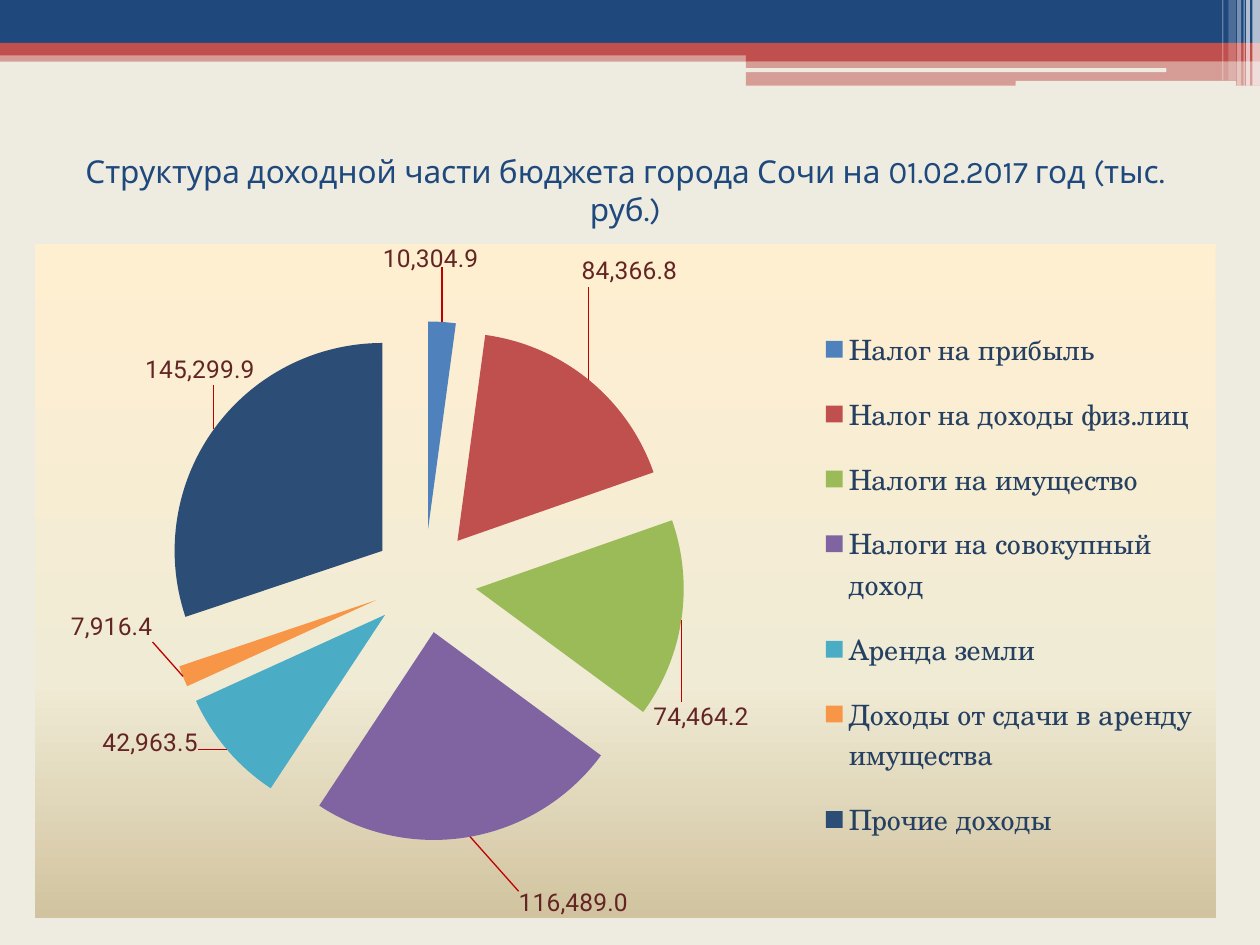
from lxml import etree
from pptx import Presentation
from pptx.chart.data import CategoryChartData
from pptx.dml.color import RGBColor
from pptx.enum.chart import XL_CHART_TYPE as ChartType, XL_LABEL_POSITION as LabelPos
from pptx.enum.chart import XL_LEGEND_POSITION as LegendPos
from pptx.enum.shapes import MSO_SHAPE as Shape
from pptx.enum.text import MSO_ANCHOR, PP_ALIGN
from pptx.oxml import parse_xml
from pptx.oxml.ns import nsdecls, qn
from pptx.util import Pt

NAVY = RGBColor(0x1F, 0x49, 0x7D)
RED = RGBColor(0xC0, 0x50, 0x4D)
CREAM = RGBColor(0xEE, 0xEC, 0xE1)
WHITE = RGBColor(0xFF, 0xFF, 0xFF)
BLACK = RGBColor(0, 0, 0)
LEGEND_BLUE = RGBColor(0x25, 0x40, 0x61)
LABEL_BROWN = RGBColor(0x63, 0x25, 0x23)
LEADER_RED = RGBColor(0xC0, 0, 0)
GRADIENT = [(0, RGBColor(0xFF, 0xEF, 0xD1)), (65, RGBColor(0xF0, 0xEB, 0xD5)),
            (100, RGBColor(0xD1, 0xC3, 0x9F))]
NUMBER_FORMAT = "#,##0.0"

# category, value, slice colour, label shift as a share of the chart size
INCOME = [
    ("Налог на прибыль", 10304.9, RGBColor(0x4F, 0x81, 0xBD), (-0.01, -0.07)),
    ("Налог на доходы физ.лиц", 84366.8, RED, (-0.01, -0.13)),
    ("Налоги на имущество", 74464.2, RGBColor(0x9B, 0xBB, 0x59), (-0.03, 0.12)),
    ("Налоги на совокупный доход", 116489.0, RGBColor(0x80, 0x64, 0xA2), (0.04, 0.07)),
    ("Аренда земли", 42963.5, RGBColor(0x4B, 0xAC, 0xC6), (-0.02, -0.04)),
    ("Доходы от сдачи в аренду имущества", 7916.4, RGBColor(0xF7, 0x96, 0x46), (-0.02, -0.1)),
    ("Прочие доходы", 145299.9, RGBColor(0x2C, 0x4D, 0x75), (0.04, -0.06)),
]


def add_band(s, box, color, alpha=100, kind=Shape.RECTANGLE):
    sp = s.shapes.add_shape(kind, *map(Pt, box))
    sp.shadow.inherit = False
    sp.line.fill.background()
    sp.fill.solid()
    sp.fill.fore_color.rgb = color
    if alpha < 100:
        clr = sp.fill._xPr.find(".//" + qn("a:srgbClr"))
        etree.SubElement(clr, qn("a:alpha")).set("val", str(alpha * 1000))


def add_header(s, x, y, w):
    """Coloured bands with light stripes at the right end."""
    half = x + 426.2
    add_band(s, (x, y + 28.8, w, 6.5), RED, 50)
    add_band(s, (x, y, w, 24.5), NAVY)
    add_band(s, (x, y + 24.5, w, 7.2), RED)
    add_band(s, (half, y + 28, w - 426.2, 6.9), RED)
    add_band(s, (half, y + 34.7, w - 426.2, 14.2), RED, 50)
    for left, top, width, height in [(425.5, 39, 241, 2.2), (580.3, 46.2, 126, 2.8)]:
        add_band(s, (x + left, y + top, width, height), CREAM, kind=Shape.ROUNDED_RECTANGLE)
    stripes = [(4.3, 4.3, 49, 65), (7.9, 2.2, 49, 65), (9.4, 0.7, 49, 60),
               (13, 2.2, 49, 40), (18, 4.3, 46, 20), (21.6, 0.7, 46, 30)]
    for from_right, width, height, alpha in stripes:
        add_band(s, (x + w - from_right, y, width, height), WHITE, alpha)


def set_font(font, size, name, color):
    font.size, font.name, font.bold = Pt(size), name, False
    font.color.rgb = color


def add_title(s, x, y, w, h):
    sp = s.shapes.title
    sp.left, sp.top, sp.width, sp.height = map(Pt, (x, y, w, h))
    tf = sp.text_frame
    tf.word_wrap = True
    tf.vertical_anchor = MSO_ANCHOR.MIDDLE
    p = tf.paragraphs[0]
    p.alignment = PP_ALIGN.CENTER
    r = p.add_run()
    r.text = "Структура доходной части бюджета города Сочи на 01.02.2017 год (тыс. руб.)"
    set_font(r.font, 18, "Karla", NAVY)


def manual_layout(x, y, w=None, h=None):
    """Chart layout in shares of the chart; without a size it is a shift."""
    parts = []
    if w is not None:
        parts += [("xMode", "edge"), ("yMode", "edge")]
    parts += [("x", x), ("y", y)]
    if w is not None:
        parts += [("w", w), ("h", h)]
    inner = "".join(f'<c:{tag} val="{val}"/>' for tag, val in parts)
    return parse_xml(f'<c:layout {nsdecls("c")}><c:manualLayout>{inner}'
                     '</c:manualLayout></c:layout>')


def replace_layout(parent, layout, index):
    old = parent.find(qn("c:layout"))
    if old is not None:
        parent.remove(old)
    parent.insert(index, layout)


def fill_background(chart):
    stops = "".join(f'<a:gs pos="{pos * 1000}"><a:srgbClr val="{color}"/></a:gs>'
                    for pos, color in GRADIENT)
    chart._chartSpace.find(qn("c:chart")).addnext(parse_xml(
        f'<c:spPr {nsdecls("c", "a")}><a:gradFill><a:gsLst>{stops}</a:gsLst>'
        '<a:lin ang="5400000" scaled="0"/></a:gradFill><a:ln><a:noFill/></a:ln></c:spPr>'))


def format_slices(series):
    ser = series._element
    ser.find(qn("c:tx")).addnext(parse_xml(f'<c:explosion {nsdecls("c")} val="25"/>'))
    labels = series.data_labels
    labels.show_value = True
    labels.number_format, labels.number_format_is_linked = NUMBER_FORMAT, False
    set_font(labels.font, 14, "Roboto", LABEL_BROWN)
    labels._element.append(parse_xml(
        f'<c:leaderLines {nsdecls("c", "a")}><c:spPr><a:ln w="9525"><a:solidFill>'
        f'<a:srgbClr val="{LEADER_RED}"/></a:solidFill></a:ln></c:spPr></c:leaderLines>'))
    for i, (_, _, color, shift) in enumerate(INCOME):
        point = series.points[i]
        point.format.fill.solid()
        point.format.fill.fore_color.rgb = color
        set_font(point.data_label.font, 14, "Roboto", LABEL_BROWN)
        point.data_label.position = LabelPos.OUTSIDE_END
        label = ser.findall(".//" + qn("c:dLbl"))[i]
        label.insert(1, manual_layout(*shift))
        label.insert(2, parse_xml(f'<c:numFmt {nsdecls("c")} formatCode="{NUMBER_FORMAT}" '
                                  'sourceLinked="0"/>'))


def add_income_chart(s, x, y, w, h):
    data = CategoryChartData(number_format=NUMBER_FORMAT)
    data.categories = [row[0] for row in INCOME]
    data.add_series("Series 1", [row[1] for row in INCOME])
    chart = s.shapes.add_chart(ChartType.PIE, *map(Pt, (x, y, w, h)), data).chart
    set_font(chart.font, 18, "TeX Gyre Schola", BLACK)
    chart.has_title = False
    chart.plots[0].vary_by_categories = True
    fill_background(chart)
    format_slices(chart.plots[0].series[0])

    chart.has_legend = True
    legend = chart.legend
    legend.position, legend.include_in_layout = LegendPos.RIGHT, False
    set_font(legend.font, 16, "TeX Gyre Schola", LEGEND_BLUE)
    replace_layout(legend._element, manual_layout(0.66, 0.09, 0.33, 0.83), 1)
    plot_area = chart._chartSpace.find(".//" + qn("c:plotArea"))
    layout = manual_layout(0.11, 0.11, 0.44, 0.78)
    layout[0].insert(0, parse_xml(f'<c:layoutTarget {nsdecls("c")} val="inner"/>'))
    replace_layout(plot_area, layout, 0)


def main():
    prs = Presentation()
    prs.slide_width, prs.slide_height = Pt(720), Pt(540)
    s = prs.slides.add_slide(prs.slide_layouts[5])
    s.background.fill.solid()
    s.background.fill.fore_color.rgb = CREAM
    add_header(s, 0, 0, 720)
    add_title(s, 20, 66.5, 674.6, 84)
    add_income_chart(s, 20, 139.5, 674.6, 385.2)
    prs.save("out.pptx")


if __name__ == "__main__":
    main()
